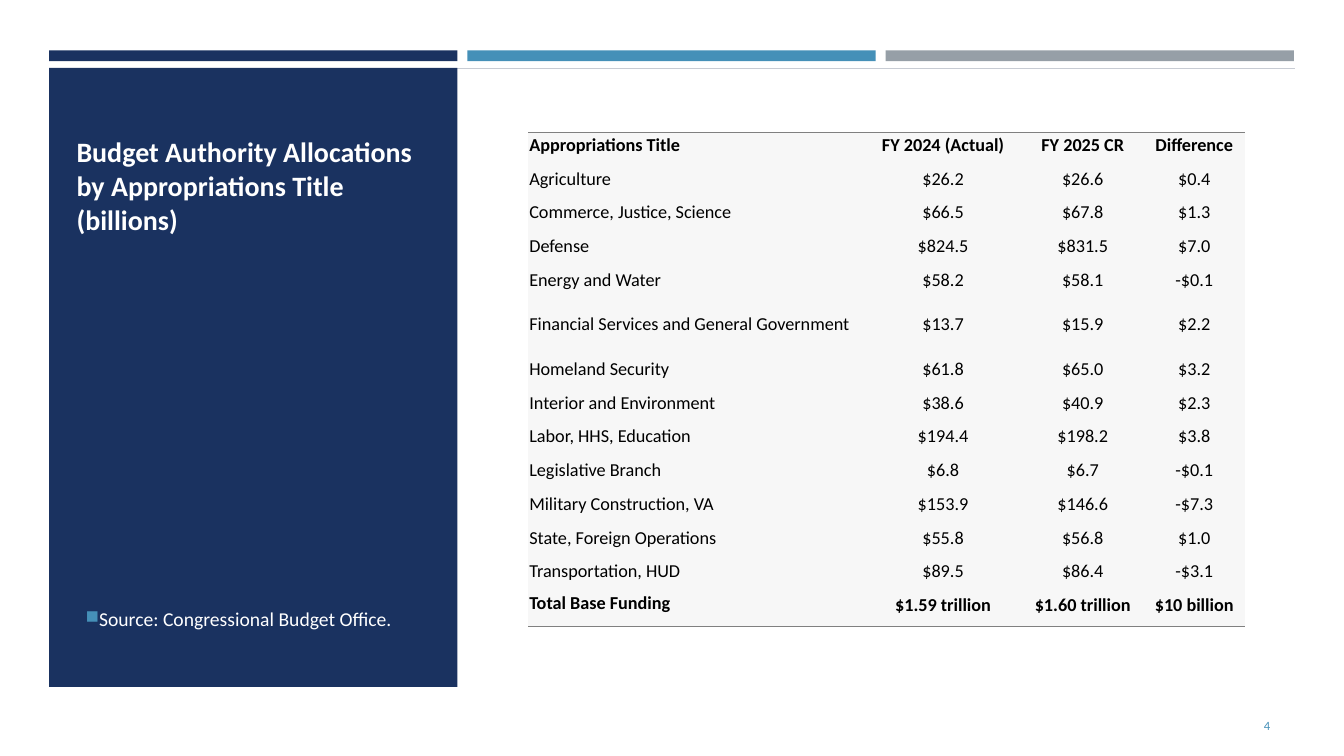
import lxml.etree
import pptx
import pptx.dml.color
import pptx.enum.shapes
import pptx.enum.text
import pptx.oxml.ns
import pptx.util

Cm = pptx.util.Cm
Pt = pptx.util.Pt
qn = pptx.oxml.ns.qn
ALIGN = pptx.enum.text.PP_ALIGN
ANCHOR = pptx.enum.text.MSO_ANCHOR

COLORS = {
    "navy": "1A3260",
    "blue": "4590B8",
    "gray": "969FA7",
    "hairline": "C8CCD4",
    "white": "FFFFFF",
    "black": "000000",
    "cell": "F7F7F7",
    "rule": "808080",
}


def rgb(name):
    return pptx.dml.color.RGBColor.from_string(COLORS[name])


def write_text(frame, text, size=13, color="black", bold=False, align=ALIGN.LEFT):
    para = frame.paragraphs[0]
    para.alignment = align
    span = para.add_run()
    span.text = text
    span.font.name = "Calibri"
    span.font.size = Pt(size)
    span.font.bold = bold
    span.font.color.rgb = rgb(color)
    return para


deck = pptx.Presentation()
deck.slide_width, deck.slide_height = Cm(33.87), Cm(19.05)
page = deck.slides.add_slide(deck.slide_layouts[6])

# Hairline below the top bars
hairline = page.shapes.add_connector(
    pptx.enum.shapes.MSO_CONNECTOR.STRAIGHT, Cm(11.5), Cm(1.71), Cm(32.63), Cm(1.71))
hairline.line.color.rgb = rgb("hairline")
hairline.line.width = Pt(0.5)
lxml.etree.SubElement(hairline.element.spPr, qn("a:effectLst"))

# Top bars and side panel
blocks = [
    (1.24, 1.27, 0.27, "navy"),
    (11.78, 1.27, 0.27, "blue"),
    (22.32, 1.27, 0.27, "gray"),
    (1.24, 1.71, 15.6, "navy"),
]
for left, top, height, color in blocks:
    block = page.shapes.add_shape(
        pptx.enum.shapes.MSO_SHAPE.RECTANGLE, Cm(left), Cm(top), Cm(10.29), Cm(height))
    block.shadow.inherit = False
    block.fill.solid()
    block.fill.fore_color.rgb = rgb(color)
    block.line.fill.background()

# Title, source and page number
texts = [
    ("Budget Authority Allocations by Appropriations Title (billions)",
     (1.68, 1.96, 9.47, 4.95), ANCHOR.BOTTOM, 0.97,
     dict(size=20, color="white", bold=True)),
    ("Source: Congressional Budget Office.",
     (1.91, 14.81, 10.52, 2.29), ANCHOR.MIDDLE, 0.79,
     dict(size=14, color="white")),
    ("4", (29.34, 17.78, 2.92, 1.02), ANCHOR.MIDDLE, 0.13,
     dict(size=9, color="blue", align=ALIGN.RIGHT)),
]
paras = []
for text, place, anchor, bottom_inset, style in texts:
    box = page.shapes.add_textbox(*map(Cm, place))
    frame = box.text_frame
    frame.word_wrap = True
    frame.vertical_anchor = anchor
    frame.margin_bottom = Cm(bottom_inset)
    paras.append(write_text(frame, text, **style))

# Square bullet of the source line
source = paras[1]
source.line_spacing = 0.9
source.space_before = Pt(2.8)
source.space_after = Pt(6)
properties = source._p.get_or_add_pPr()
bullet_color = lxml.etree.SubElement(properties, qn("a:buClr"))
lxml.etree.SubElement(bullet_color, qn("a:srgbClr"), val=COLORS["blue"])
lxml.etree.SubElement(properties, qn("a:buSzPct"), val="92000")
lxml.etree.SubElement(properties, qn("a:buChar"), char="■")

# Table of allocations
rows = [
    ("Appropriations Title", "FY 2024 (Actual)", "FY 2025 CR", "Difference"),
    ("Agriculture", "$26.2", "$26.6", "$0.4"),
    ("Commerce, Justice, Science", "$66.5", "$67.8", "$1.3"),
    ("Defense", "$824.5", "$831.5", "$7.0"),
    ("Energy and Water", "$58.2", "$58.1", "-$0.1"),
    ("Financial Services and General Government", "$13.7", "$15.9", "$2.2"),
    ("Homeland Security", "$61.8", "$65.0", "$3.2"),
    ("Interior and Environment", "$38.6", "$40.9", "$2.3"),
    ("Labor, HHS, Education", "$194.4", "$198.2", "$3.8"),
    ("Legislative Branch", "$6.8", "$6.7", "-$0.1"),
    ("Military Construction, VA", "$153.9", "$146.6", "-$7.3"),
    ("State, Foreign Operations", "$55.8", "$56.8", "$1.0"),
    ("Transportation, HUD", "$89.5", "$86.4", "-$3.1"),
    ("Total Base Funding", "$1.59 trillion", "$1.60 trillion", "$10 billion"),
]
last = len(rows) - 1
table = page.shapes.add_table(
    len(rows), 4, Cm(13.31), Cm(3.33), Cm(18.07), Cm(12.45)).table
table.first_row = False
table.horz_banding = False
for column, width in zip(table.columns, (8.46, 3.99, 3.05, 2.57)):
    column.width = Cm(width)

for r, values in enumerate(rows):
    table.rows[r].height = Cm(1.4 if r == 5 else 0.85)
    for c, value in enumerate(values):
        cell = table.cell(r, c)
        cell.margin_left = cell.margin_right = Cm(0.03)
        cell.margin_top, cell.margin_bottom = 0, Cm(0.2)
        cell.vertical_anchor = ANCHOR.TOP if (r, c) == (last, 0) else ANCHOR.MIDDLE
        write_text(cell.text_frame, value, bold=r in (0, last),
                   align=ALIGN.CENTER if c else ALIGN.LEFT)

        # Rules only above the header and below the total
        cell_properties = cell._tc.get_or_add_tcPr()
        for side in ("lnL", "lnR", "lnT", "lnB"):
            border = lxml.etree.SubElement(cell_properties, qn("a:" + side), w="12700")
            if (r, side) in ((0, "lnT"), (last, "lnB")):
                paint = lxml.etree.SubElement(border, qn("a:solidFill"))
                lxml.etree.SubElement(paint, qn("a:srgbClr"), val=COLORS["rule"])
            else:
                lxml.etree.SubElement(border, qn("a:noFill"))
        cell.fill.solid()
        cell.fill.fore_color.rgb = rgb("cell")

deck.save("out.pptx")
